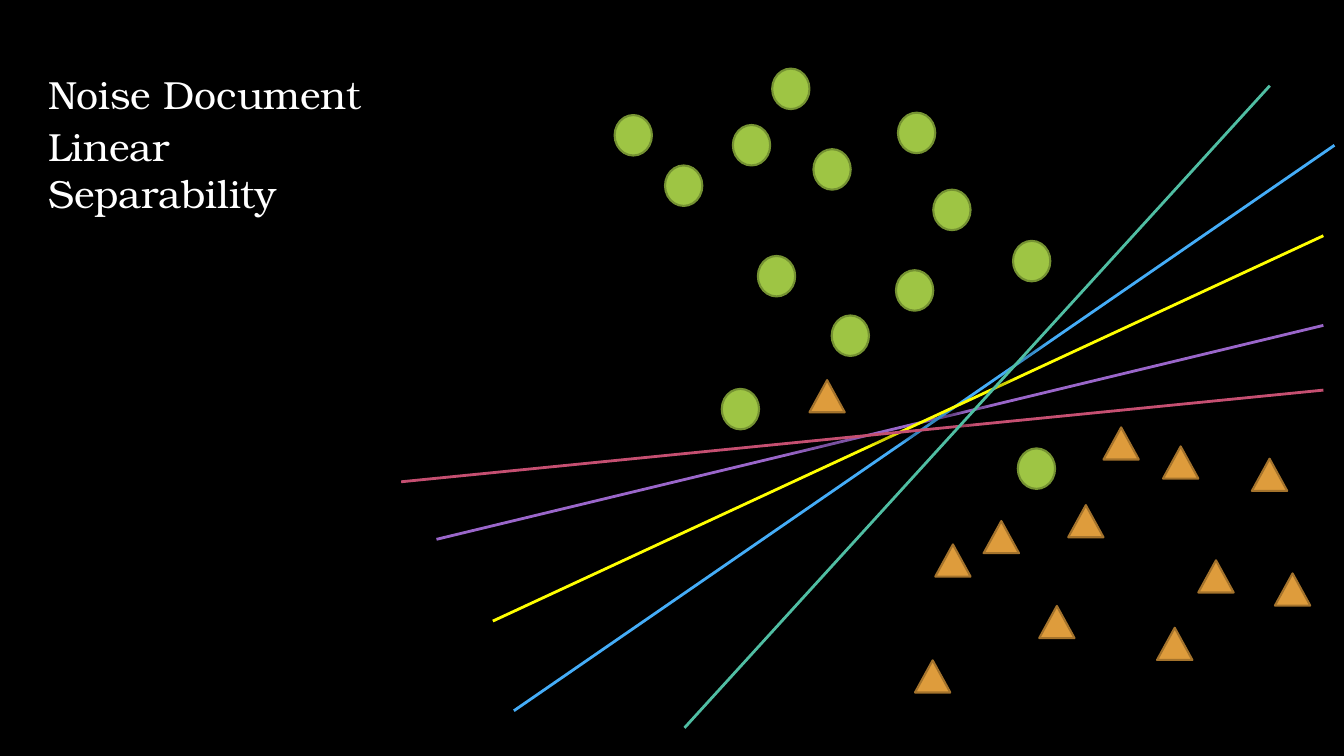
from dataclasses import dataclass

from lxml.etree import SubElement
from pptx import Presentation
from pptx.dml.color import RGBColor
from pptx.enum.shapes import MSO_CONNECTOR as Connector, MSO_SHAPE as Preset
from pptx.enum.text import MSO_AUTO_SIZE as AutoSize
from pptx.oxml.ns import qn
from pptx.util import Cm, Pt


@dataclass(frozen=True)
class Theme:
    background: str = "000000"
    title: str = "FFFFFF"
    circle: str = "9EC544"
    circle_edge: str = "759232"
    triangle: str = "DE9C3C"
    triangle_edge: str = "A4732C"
    purple: str = "9A66CA"
    blue: str = "45ADF8"
    yellow: str = "FFFF00"
    red: str = "C54F71"
    green: str = "50BEA3"
    shadow: str = "000000"
    font: str = "TeX Gyre Bonum"
    title_size: float = 28
    edge_width: float = 1.5
    separator_width: float = 2


THEME = Theme()

CIRCLES = [
    (15.49, 2.9), (25.53, 6.07), (18.47, 3.15), (16.76, 4.17),
    (20.5, 3.76), (22.63, 2.84), (19.1, 6.45), (18.19, 9.8),
    (20.96, 7.95), (22.58, 6.81), (23.52, 4.78), (19.46, 1.73),
]
TRIANGLES = [
    (23.57, 13.72), (24.79, 13.13), (27.81, 10.77), (23.06, 16.64),
    (31.55, 11.56), (29.31, 11.25), (26.92, 12.73), (26.19, 15.27),
    (30.2, 14.12), (29.16, 15.82), (32.13, 14.45),
]
NOISE_CIRCLE = (25.65, 11.3)
NOISE_TRIANGLE = (20.4, 9.58)
SEPARATORS = [
    (THEME.purple, (11, 13.59), (33.35, 8.2)),
    (THEME.blue, (12.95, 17.91), (33.63, 3.66)),
    (THEME.yellow, (12.42, 15.65), (33.35, 5.94)),
    (THEME.red, (10.11, 12.14), (33.35, 9.83)),
    (THEME.green, (17.25, 18.34), (32, 2.16)),
]


def rgb(colour):
    return RGBColor.from_string(colour)


def add_marker(slide, preset, position, size, fill, edge):
    marker = slide.shapes.add_shape(preset, *map(Cm, position + size))
    marker.shadow.inherit = False
    marker.fill.solid()
    marker.fill.fore_color.rgb = rgb(fill)
    marker.line.color.rgb = rgb(edge)
    marker.line.width = Pt(THEME.edge_width)


def add_circle(slide, position):
    add_marker(slide, Preset.OVAL, position, (0.94, 1.02), THEME.circle, THEME.circle_edge)


def add_triangle(slide, position):
    add_marker(slide, Preset.ISOSCELES_TRIANGLE, position, (0.89, 0.81),
               THEME.triangle, THEME.triangle_edge)


def add_separator(slide, colour, start, end):
    separator = slide.shapes.add_connector(Connector.STRAIGHT, *map(Cm, start + end))
    separator.line.color.rgb = rgb(colour)
    separator.line.width = Pt(THEME.separator_width)
    effects = SubElement(separator._element.spPr, qn("a:effectLst"))
    shadow = SubElement(effects, qn("a:outerShdw"), blurRad=str(Pt(4)), dist=str(Pt(3)),
                        dir="5400000", rotWithShape="0")
    shade = SubElement(shadow, qn("a:srgbClr"), val=THEME.shadow)
    SubElement(shade, qn("a:alpha"), val="54000")


def add_title_line(slide, words, top, width):
    box = slide.shapes.add_textbox(Cm(0.97), Cm(top), Cm(width), Cm(1.45))
    frame = box.text_frame
    frame.word_wrap = True
    frame.auto_size = AutoSize.SHAPE_TO_FIT_TEXT
    run = frame.paragraphs[0].add_run()
    run.text = words
    run.font.name = THEME.font
    run.font.size = Pt(THEME.title_size)
    run.font.color.rgb = rgb(THEME.title)


def main():
    deck = Presentation()
    deck.slide_width, deck.slide_height = Cm(33.87), Cm(19.05)
    slide = deck.slides.add_slide(deck.slide_layouts[6])
    slide.background.fill.solid()
    slide.background.fill.fore_color.rgb = rgb(THEME.background)

    for position in CIRCLES:
        add_circle(slide, position)
    for position in TRIANGLES:
        add_triangle(slide, position)
    for colour, start, end in SEPARATORS:
        add_separator(slide, colour, start, end)
    add_title_line(slide, "Noise Document", 1.65, 8.94)
    add_triangle(slide, NOISE_TRIANGLE)
    add_circle(slide, NOISE_CIRCLE)
    add_title_line(slide, "Linear Separability", 2.95, 9.14)

    deck.save("out.pptx")


if __name__ == "__main__":
    main()
